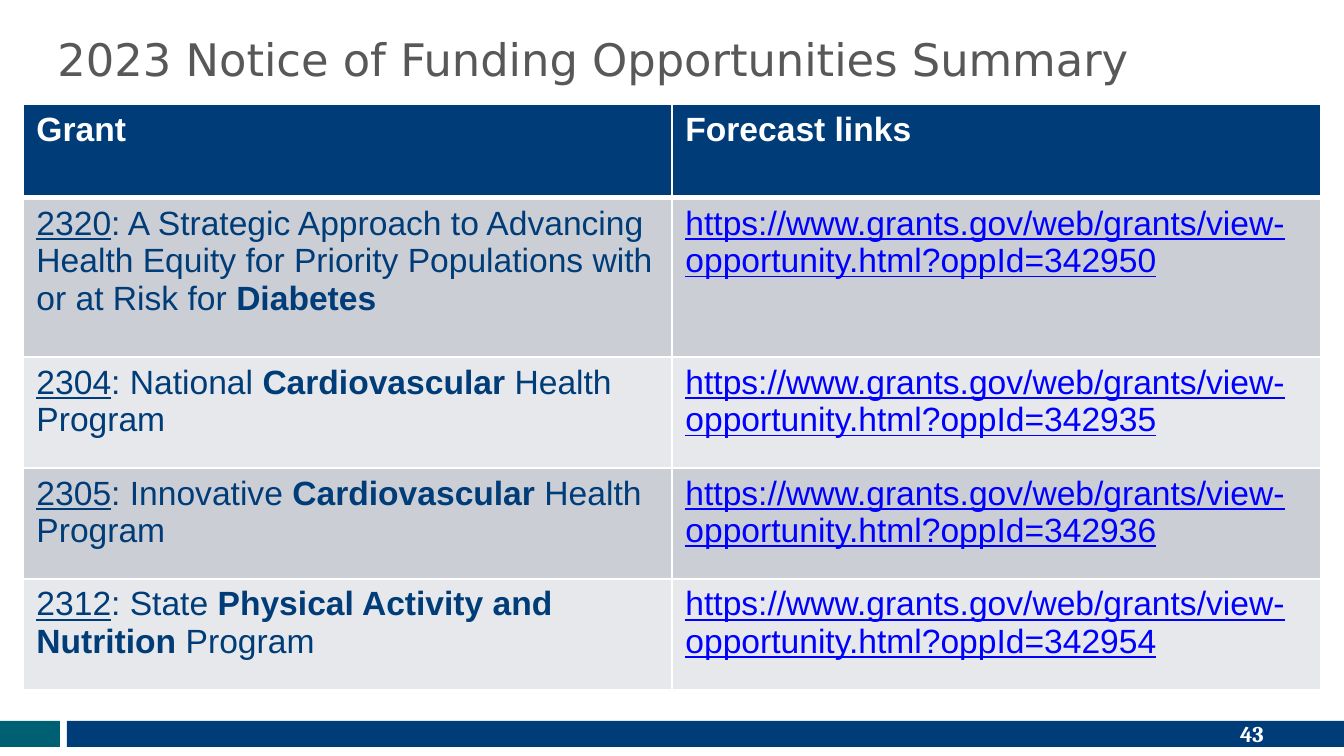
from lxml.etree import SubElement
from pptx import Presentation
from pptx.dml.color import RGBColor
from pptx.enum.shapes import MSO_SHAPE as Shape
from pptx.enum.text import MSO_ANCHOR as Anchor, PP_ALIGN as Align
from pptx.oxml.ns import qn
from pptx.util import Pt

# Content
TITLE = "2023 Notice of Funding Opportunities Summary"
PAGE_NUMBER = "43"
HEADINGS = ["Grant", "Forecast links"]
LINK = "https://www.grants.gov/web/grants/view-opportunity.html?oppId="
# number, text before the topic, topic in bold, text after it, opportunity id
GRANTS = [
    ("2320", ": A Strategic Approach to Advancing Health Equity for Priority "
             "Populations with or at Risk for ", "Diabetes", "", "342950"),
    ("2304", ": National ", "Cardiovascular", " Health Program", "342935"),
    ("2305", ": Innovative ", "Cardiovascular", " Health Program", "342936"),
    ("2312", ": State ", "Physical Activity and Nutrition", " Program", "342954"),
]

# Look
NAVY = RGBColor(0x00, 0x3D, 0x78)
TEAL = RGBColor(0x00, 0x60, 0x73)
GRAY = RGBColor(0x58, 0x58, 0x58)
WHITE = RGBColor(0xFF, 0xFF, 0xFF)
LINK_BLUE = RGBColor(0x00, 0x00, 0xFF)
BANDS = [RGBColor(0xCC, 0xCE, 0xD6), RGBColor(0xE7, 0xE8, 0xEC)]

# Layout in px
SLIDE = (1344, 756)
TITLE_BOX = (44, 15, 1300, 88)
TABLE_LEFT, TABLE_TOP = 23, 104
COLUMN_WIDTH = 649
ROW_HEIGHTS = [94, 159, 111, 111, 111]
FOOTER_BARS = [((0, 721, 60, 26), TEAL), ((67, 721, 1277, 26), NAVY)]
NUMBER_BOX = (964, 714, 313, 40)


def px(value):
    return round(value * 914400 / 134.4)


def box(lengths):
    return [px(length) for length in lengths]


def style(font, name, size, color, bold=False):
    font.name, font.size, font.bold = name, Pt(size), bold
    font.color.rgb = color


def add_borders(cell, bottom_width):
    properties = cell._tc.get_or_add_tcPr()
    for index, side in enumerate(("lnL", "lnR", "lnT", "lnB")):
        width = bottom_width if side == "lnB" else 1
        line = properties.makeelement(qn(f"a:{side}"), {"w": str(Pt(width))})
        fill = SubElement(line, qn("a:solidFill"))
        SubElement(fill, qn("a:srgbClr"), val=str(WHITE))
        properties.insert(index, line)


def fill_cell(cell, runs, fill, color, bottom_width=1):
    """Each run is (text, underlined, bold)."""
    cell.fill.solid()
    cell.fill.fore_color.rgb = fill
    add_borders(cell, bottom_width)
    paragraph = cell.text_frame.paragraphs[0]
    for text, underlined, bold in runs:
        if text:
            run = paragraph.add_run()
            run.text = text
            style(run.font, "Arial", 18, color, bold)
            run.font.underline = underlined


deck = Presentation()
deck.slide_width, deck.slide_height = box(SLIDE)
slide = deck.slides.add_slide(deck.slide_layouts[5])

# Footer
for place, color in FOOTER_BARS:
    bar = slide.shapes.add_shape(Shape.RECTANGLE, *box(place))
    bar.shadow.inherit = False
    bar.fill.solid()
    bar.fill.fore_color.rgb = color
    bar.line.fill.background()

number = slide.shapes.add_textbox(*box(NUMBER_BOX)).text_frame
number.word_wrap = True
number.vertical_anchor = Anchor.MIDDLE
number.text = PAGE_NUMBER
number.paragraphs[0].alignment = Align.RIGHT
style(number.paragraphs[0].font, "Cambria", 12, WHITE, bold=True)

# Title
title = slide.shapes.title
title.left, title.top, title.width, title.height = box(TITLE_BOX)
title.text_frame.text = TITLE
title.text_frame.vertical_anchor = Anchor.MIDDLE
heading = title.text_frame.paragraphs[0]
heading.alignment = Align.LEFT
style(heading.font, "DejaVu Sans", 24, GRAY)

# Grants table
table = slide.shapes.add_table(
    len(GRANTS) + 1, len(HEADINGS), px(TABLE_LEFT), px(TABLE_TOP),
    px(COLUMN_WIDTH * len(HEADINGS)), px(sum(ROW_HEIGHTS))).table
for column in table.columns:
    column.width = px(COLUMN_WIDTH)
for row, height in zip(table.rows, ROW_HEIGHTS):
    row.height = px(height)

for column, text in enumerate(HEADINGS):
    fill_cell(table.cell(0, column), [(text, False, True)], NAVY, WHITE, 3)

for row, (grant, before, topic, after, opportunity) in enumerate(GRANTS, 1):
    band = BANDS[(row - 1) % len(BANDS)]
    description = [(grant, True, False), (before, False, False),
                   (topic, False, True), (after, False, False)]
    fill_cell(table.cell(row, 0), description, band, NAVY)
    fill_cell(table.cell(row, 1), [(LINK + opportunity, True, False)], band, LINK_BLUE)

deck.save("out.pptx")
